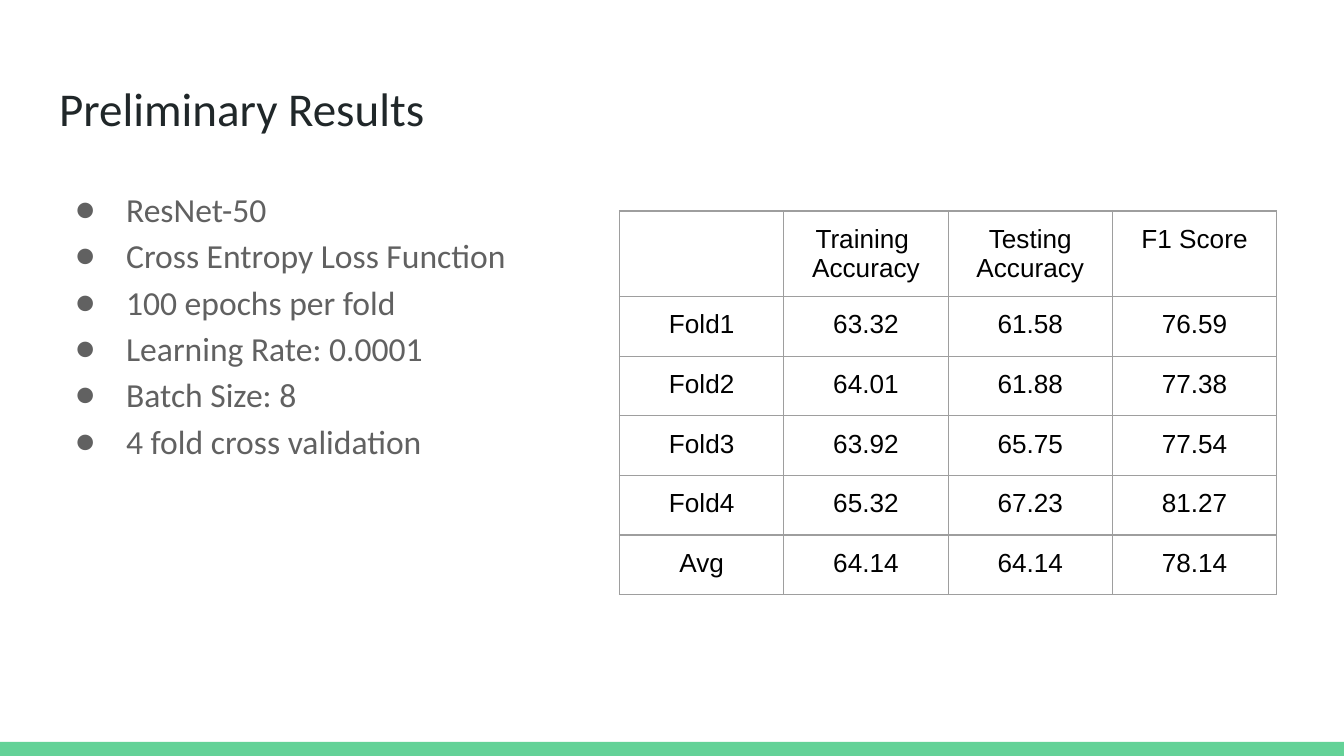
"""Build the Preliminary Results slide with a settings list and a fold table."""
from dataclasses import dataclass

from lxml.etree import SubElement
from pptx import Presentation
from pptx.dml.color import RGBColor
from pptx.enum.shapes import MSO_SHAPE
from pptx.enum.text import MSO_ANCHOR, MSO_AUTO_SIZE, PP_ALIGN
from pptx.oxml.ns import qn
from pptx.util import Inches, Pt


@dataclass(frozen=True)
class Theme:
    accent: str = "63D297"
    title: str = "202729"
    body: str = "616161"
    cell: str = "000000"
    border: str = "9E9E9E"
    text_font: str = "Calibri"
    table_font: str = "Arial"
    title_size: float = 25.2
    body_size: float = 18
    cell_size: float = 14
    border_width: float = 0.75


def add_run(p, text, font, size, color):
    r = p.add_run()
    r.text = text
    r.font.name = font
    r.font.size = Pt(size)
    r.font.color.rgb = RGBColor.from_string(color)


def set_frame(tf):
    tf.word_wrap = True
    tf.auto_size = MSO_AUTO_SIZE.NONE
    tf.vertical_anchor = MSO_ANCHOR.TOP
    tf.margin_left = tf.margin_right = tf.margin_top = tf.margin_bottom = Inches(0.1)


theme = Theme()
settings = [
    "ResNet-50",
    "Cross Entropy Loss Function",
    "100 epochs per fold",
    "Learning Rate: 0.0001",
    "Batch Size: 8",
    "4 fold cross validation",
]
results = [
    ["", "Training \nAccuracy", "Testing\nAccuracy", "F1 Score"],
    ["Fold1", "63.32", "61.58", "76.59"],
    ["Fold2", "64.01", "61.88", "77.38"],
    ["Fold3", "63.92", "65.75", "77.54"],
    ["Fold4", "65.32", "67.23", "81.27"],
    ["Avg", "64.14", "64.14", "78.14"],
]

prs = Presentation()
prs.slide_width = Inches(10)
prs.slide_height = prs.slide_width * 9 // 16
s = prs.slides.add_slide(prs.slide_layouts[5])

bar_top = Inches(5.52)
bar = s.shapes.add_shape(
    MSO_SHAPE.RECTANGLE, 0, bar_top, prs.slide_width, prs.slide_height - bar_top
)
bar.shadow.inherit = False
bar.fill.solid()
bar.fill.fore_color.rgb = RGBColor.from_string(theme.accent)
bar.line.fill.background()

title = s.shapes.title
title.left, title.top = Inches(0.34), Inches(0.49)
title.width, title.height = Inches(9.32), Inches(0.63)
set_frame(title.text_frame)
p = title.text_frame.paragraphs[0]
p.alignment = PP_ALIGN.LEFT
add_run(p, "Preliminary Results", theme.text_font, theme.title_size, theme.title)

body = s.shapes.add_textbox(Inches(0.34), Inches(1.26), Inches(4.11), Inches(3.74))
tf = body.text_frame
set_frame(tf)
for i, setting in enumerate(settings):
    p = tf.add_paragraph() if i else tf.paragraphs[0]
    p.line_spacing = 1.15
    pPr = p._p.get_or_add_pPr()
    pPr.set("marL", str(Inches(0.5)))
    pPr.set("indent", str(Inches(-0.38)))
    SubElement(SubElement(pPr, qn("a:buClr")), qn("a:srgbClr"), val=theme.body)
    SubElement(pPr, qn("a:buFont"), typeface=theme.text_font)
    SubElement(pPr, qn("a:buChar"), char="●")
    add_run(p, setting, theme.text_font, theme.body_size, theme.body)

rows, cols = len(results), len(results[0])
table_width, table_height = Inches(4.89), Inches(2.66)
table = s.shapes.add_table(
    rows, cols, Inches(4.61), Inches(1.57), table_width, table_height
).table
table.first_row = table.horz_banding = False
for column in table.columns:
    column.width = table_width // cols
for row, values in zip(table.rows, results):
    row.height = table_height // rows
    for cell, value in zip(row.cells, values):
        cell.margin_left = cell.margin_right = Inches(0.1)
        cell.margin_top = cell.margin_bottom = Inches(0.1)
        tcPr = cell._tc.get_or_add_tcPr()
        for side in ("lnL", "lnR", "lnT", "lnB"):
            ln = SubElement(tcPr, qn(f"a:{side}"), w=str(Pt(theme.border_width)))
            SubElement(SubElement(ln, qn("a:solidFill")), qn("a:srgbClr"), val=theme.border)
        cell.fill.background()
        if not value:
            continue
        for i, line in enumerate(value.split("\n")):
            p = cell.text_frame.add_paragraph() if i else cell.text_frame.paragraphs[0]
            p.alignment = PP_ALIGN.CENTER
            add_run(p, line, theme.table_font, theme.cell_size, theme.cell)

prs.save("out.pptx")
